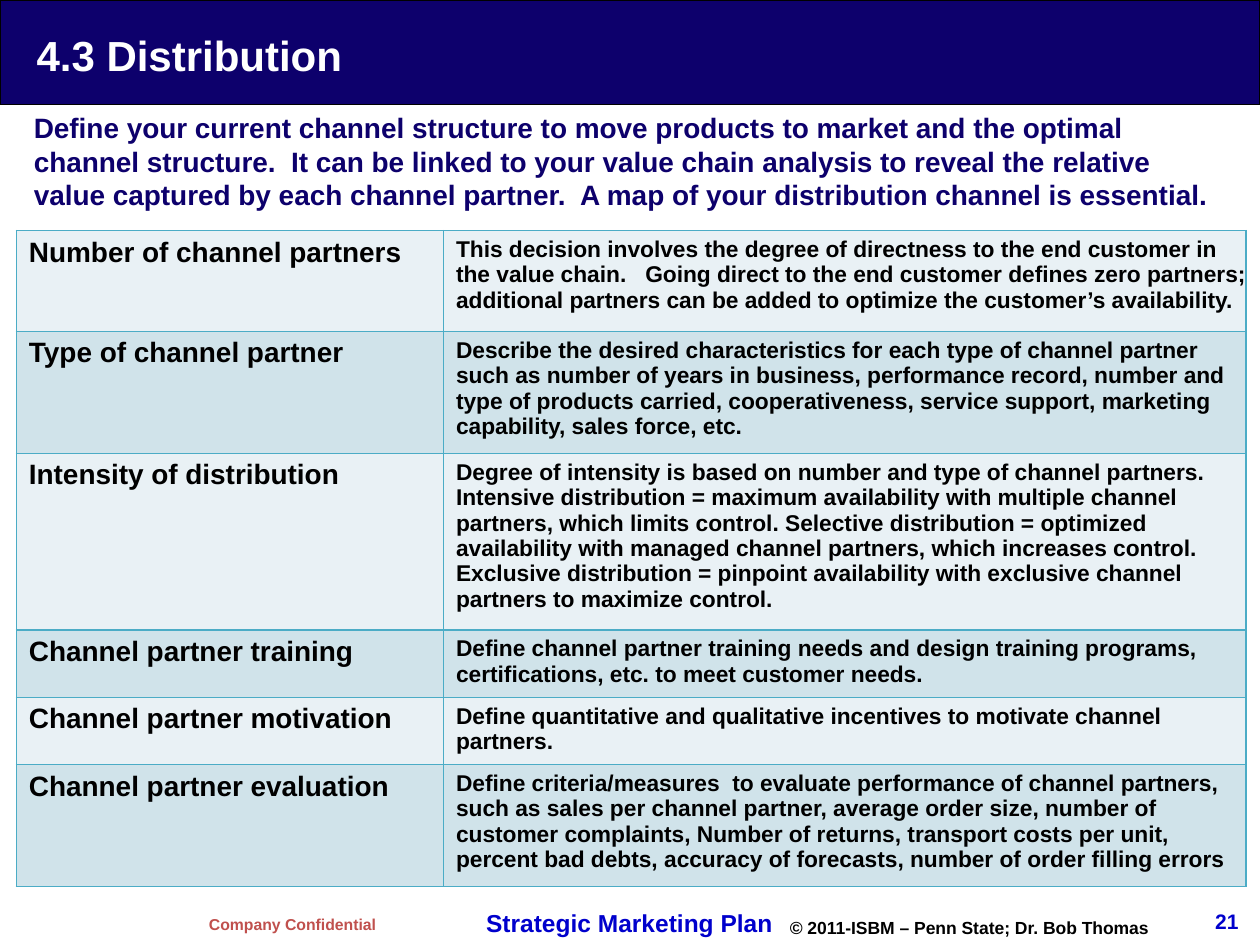
from lxml.etree import SubElement
from pptx import Presentation
from pptx.dml.color import RGBColor
from pptx.enum.shapes import MSO_SHAPE
from pptx.enum.text import MSO_ANCHOR, PP_ALIGN
from pptx.oxml.ns import qn
from pptx.util import Inches, Pt

WIDTH, HEIGHT = Inches(10), Inches(7.5)
NAVY, BLUE, RED = "0D006C", "0000CC", "C0504D"
BLACK, WHITE, TEAL = "000000", "FFFFFF", "4BACC6"
BANDS = ("E9F1F5", "D0E3EA")
COLUMN_SHARES = (33.9, 63.7)
LABEL_SIZE, DETAIL_SIZE = 16, 13

INTRO = (
    "Define your current channel structure to move products to market and the optimal "
    "channel structure.  It can be linked to your value chain analysis to reveal the "
    "relative value captured by each channel partner.  A map of your distribution "
    "channel is essential."
)

DECISIONS = [
    (10.67, "Number of channel partners",
     "This decision involves the degree of directness to the end customer in the value "
     "chain.   Going direct to the end customer defines zero partners; additional "
     "partners can be added to optimize the customer’s availability."),
    (10.67, "Type of channel partner",
     "Describe the desired characteristics for each type of channel partner such as "
     "number of years in business, performance record, number and type of products "
     "carried, cooperativeness, service support, marketing capability, sales force, etc."),
    (10.67, "Intensity of distribution",
     "Degree of intensity is based on number and type of channel partners.  Intensive "
     "distribution = maximum availability with multiple channel partners, which limits "
     "control. Selective distribution = optimized availability with managed channel "
     "partners, which increases control.  Exclusive distribution = pinpoint availability "
     "with exclusive channel partners to maximize control."),
    (6, "Channel partner training",
     "Define channel partner training needs and design training programs, "
     "certifications, etc. to meet customer needs."),
    (5.73, "Channel partner motivation",
     "Define quantitative and qualitative incentives to motivate channel partners."),
    (7.6, "Channel partner evaluation",
     "Define criteria/measures  to evaluate performance of channel partners, such as "
     "sales per channel partner, average order size, number of customer complaints, "
     "Number of returns, transport costs per unit, percent bad debts, accuracy of "
     "forecasts, number of order filling errors"),
]


def color(value):
    """Turn a hex string into a colour."""
    return RGBColor.from_string(value)


def across(percent):
    """Return a share of the slide width."""
    return round(WIDTH * percent / 100)


def down(percent):
    """Return a share of the slide height."""
    return round(HEIGHT * percent / 100)


def area(left, top, width, height):
    """Turn percentages of the slide into a position and size."""
    return across(left), down(top), across(width), down(height)


def write(frame, text, size=16, ink=BLACK, align=PP_ALIGN.LEFT):
    """Write one bold paragraph into a text frame."""
    para = frame.paragraphs[0]
    para.alignment = align
    span = para.add_run()
    span.text = text
    span.font.name = "Arial"
    span.font.size = Pt(size)
    span.font.bold = True
    span.font.color.rgb = color(ink)


def add_text(page, place, text, wrap=True, anchor=MSO_ANCHOR.TOP, margins=None, **style):
    """Add a text box, with its own left and right margins if given."""
    box = page.shapes.add_textbox(*area(*place))
    frame = box.text_frame
    frame.word_wrap = wrap
    frame.vertical_anchor = anchor
    if margins:
        frame.margin_left, frame.margin_right = map(across, margins)
        frame.margin_top = frame.margin_bottom = 0
    write(frame, text, **style)


def add_banner(page):
    """Add the dark band behind the title."""
    banner = page.shapes.add_shape(MSO_SHAPE.RECTANGLE, *area(0, 0, 100, 11.07))
    banner.shadow.inherit = False
    banner.fill.solid()
    banner.fill.fore_color.rgb = color(NAVY)
    banner.line.color.rgb = color(BLACK)
    banner.line.width = Pt(0.75)


def add_borders(cell):
    """Draw a thin line on all four sides of a cell."""
    properties = cell._tc.get_or_add_tcPr()
    for side in ("a:lnL", "a:lnR", "a:lnT", "a:lnB"):
        line = SubElement(properties, qn(side), w=str(Pt(1)))
        fill = SubElement(line, qn("a:solidFill"))
        SubElement(fill, qn("a:srgbClr"), val=TEAL)


def fill_cell(cell, text, size, band):
    """Give a cell its margins, borders, band colour and text."""
    cell.margin_left, cell.margin_right = across(1), 0
    cell.margin_top = cell.margin_bottom = Inches(0.05)
    add_borders(cell)
    cell.fill.solid()
    cell.fill.fore_color.rgb = color(band)
    write(cell.text_frame, text, size=size)


def add_decisions(page):
    """Add the table of channel decisions."""
    total = sum(share for share, *texts in DECISIONS)
    place = area(1.3, 24.4, sum(COLUMN_SHARES), total)
    table = page.shapes.add_table(len(DECISIONS), len(COLUMN_SHARES), *place).table
    table.first_row = table.horz_banding = False
    for column, share in zip(table.columns, COLUMN_SHARES):
        column.width = across(share)
    for index, (share, label, detail) in enumerate(DECISIONS):
        table.rows[index].height = down(share)
        band = BANDS[index % len(BANDS)]
        fill_cell(table.cell(index, 0), label, LABEL_SIZE, band)
        fill_cell(table.cell(index, 1), detail, DETAIL_SIZE, band)


def add_footer(page):
    """Add the footer texts and the page number."""
    add_text(page, (15.6, 96.13, 15.3, 3.33), "Company Confidential",
             wrap=False, size=9, ink=RED)
    add_text(page, (37.6, 95.47, 24.9, 4.53), "Strategic Marketing Plan",
             wrap=False, size=14, ink=BLUE)
    add_text(page, (61.7, 96.4, 34.2, 3.6), "© 2011-ISBM – Penn State; Dr. Bob Thomas",
             size=10)
    add_text(page, (90, 94.4, 8.3, 4.4), "21", anchor=MSO_ANCHOR.BOTTOM,
             margins=(0, 0), size=12, ink=BLUE, align=PP_ALIGN.RIGHT)


def main():
    """Build the slide and save it."""
    deck = Presentation()
    deck.slide_width, deck.slide_height = WIDTH, HEIGHT
    page = deck.slides.add_slide(deck.slide_layouts[6])
    add_footer(page)
    add_banner(page)
    add_text(page, (1.7, 0.4, 96.7, 10.67), "4.3 Distribution", anchor=MSO_ANCHOR.MIDDLE,
             margins=(1.2, 0), size=24, ink=WHITE)
    add_text(page, (1.7, 11.07, 96.7, 17.73), INTRO, ink=NAVY)
    add_decisions(page)
    deck.save("out.pptx")


if __name__ == "__main__":
    main()
